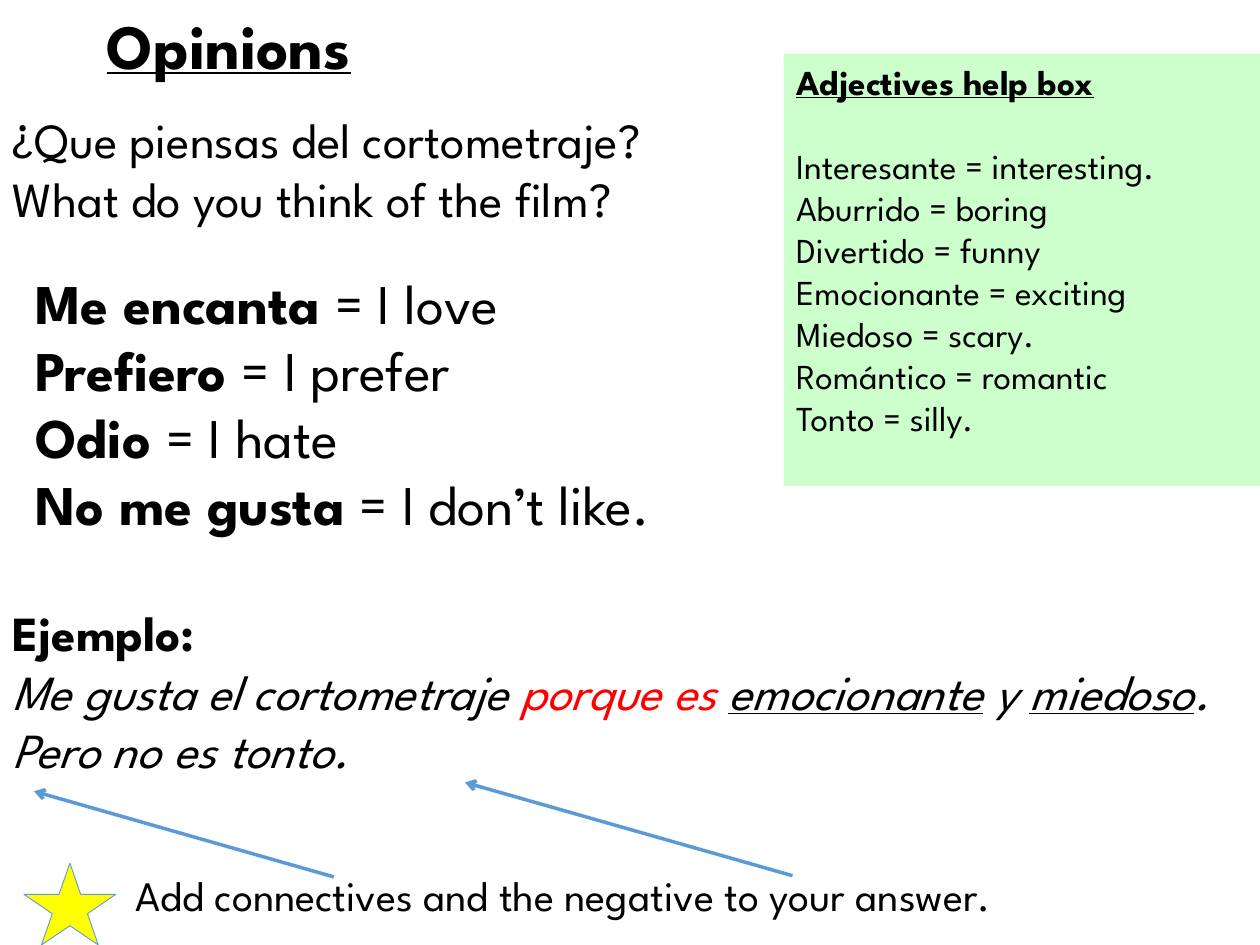
from lxml import etree
from pptx import Presentation
from pptx import util as u
from pptx.dml.color import RGBColor
from pptx.enum import shapes, text
from pptx.oxml.ns import qn

Inches, Pt = u.Inches, u.Pt
COLORS = {"ink": "000000", "accent": "FF0000", "help": "CCFFCC", "star": "FFFF00", "line": "5B9BD5"}
FONT = "League Spartan"


def rgb(name):
    return RGBColor.from_string(COLORS[name])


def write(shape, size, paragraphs):
    frame = shape.text_frame
    frame.word_wrap = True
    frame.vertical_anchor = text.MSO_ANCHOR.TOP
    for index, runs in enumerate(paragraphs):
        paragraph = frame.add_paragraph() if index else frame.paragraphs[0]
        paragraph.alignment = text.PP_ALIGN.LEFT
        for words, style in runs:
            run = paragraph.add_run()
            run.text = words
            run.font.name = FONT
            run.font.size = Pt(size)
            run.font.bold = "b" in style
            run.font.italic = "i" in style
            run.font.underline = "u" in style
            run.font.color.rgb = rgb("accent" if "r" in style else "ink")


prs = Presentation()
prs.slide_width, prs.slide_height = Inches(10), Inches(7.5)
slide = prs.slides.add_slide(prs.slide_layouts[6])

opinions = [
    ("Me encanta ", "= I love"),
    ("Prefiero ", "= I prefer"),
    ("Odio ", "= I hate"),
    ("No me gusta ", "= I don’t like."),
]
example = [
    ("Me gusta el cortometraje ", "i"),
    ("porque es ", "ir"),
    ("emocionante", "iu"),
    (" y ", "i"),
    ("miedoso", "iu"),
    (". Pero no es tonto.", "i"),
]
sections = [
    ((0.75, 0, 9.25, 0.71), 36, [[("Opinions", "bu")]]),
    ((0, 0.82, 9.92, 1.04), 28, [
        [("¿Que piensas del cortometraje?", "")],
        [("What do you think of the film?", "")],
    ]),
    ((0.98, 6.85, 8.68, 0.5), 24, [[("Add connectives and the negative to your answer.", "")]]),
    ((0.18, 2.08, 7.91, 2.26), 32, [[(spanish, "b"), (english, "")] for spanish, english in opinions]),
    ((0, 4.73, 9.92, 1.51), 28, [[("Ejemplo:", "b")], example]),
]

adjectives = [
    "Interesante = interesting.",
    "Aburrido = boring",
    "Divertido = funny",
    "Emocionante = exciting",
    "Miedoso = scary.",
    "Romántico = romantic",
    "Tonto = silly.",
]
help_box = slide.shapes.add_shape(
    shapes.MSO_SHAPE.RECTANGLE, Inches(6.22), Inches(0.43), Inches(3.78), Inches(3.43))
help_box.shadow.inherit = False
help_box.fill.solid()
help_box.fill.fore_color.rgb = rgb("help")
help_box.line.fill.background()
write(help_box, 20, [[("Adjectives help box", "bu")]] + [[(pair, "")] for pair in adjectives])
help_box.text_frame.paragraphs[1].space_before = Pt(24)

for place, size, paragraphs in sections:
    section = slide.shapes.add_textbox(*map(Inches, place))
    write(section, size, paragraphs)

star = slide.shapes.add_shape(
    shapes.MSO_SHAPE.STAR_5_POINT, Inches(0.19), Inches(6.85), Inches(0.73), Inches(0.65))
star.shadow.inherit = False
star.fill.solid()
star.fill.fore_color.rgb = rgb("star")
star.line.color.rgb = rgb("line")
star.line.width = Pt(0.5)

for ends in [(2.65, 6.96, 0.27, 6.28), (6.29, 6.95, 3.69, 6.21)]:
    pointer = slide.shapes.add_connector(shapes.MSO_CONNECTOR.STRAIGHT, *map(Inches, ends))
    pointer.line.color.rgb = rgb("line")
    pointer.line.width = Pt(2)
    properties = pointer.element.spPr
    etree.SubElement(properties.find(qn("a:ln")), qn("a:tailEnd"), type="arrow")
    etree.SubElement(properties, qn("a:effectLst"))

prs.save("out.pptx")
